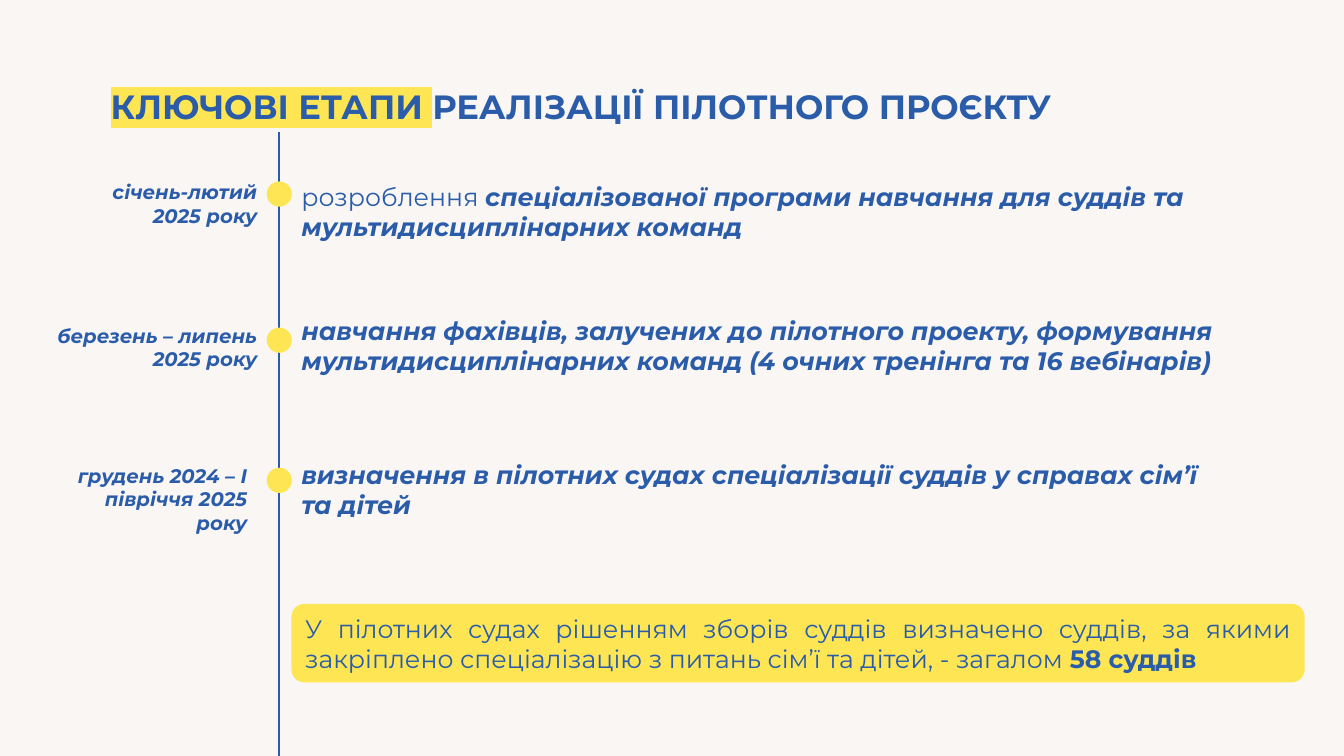
"""Build the slide with the key stages of the pilot project."""
from dataclasses import dataclass

from lxml import etree
from pptx import Presentation
from pptx import util as u
from pptx.dml.color import RGBColor
from pptx.enum import shapes, text
from pptx.oxml.ns import qn


@dataclass(frozen=True)
class Theme:
    """Colours, font and type sizes of the slide."""
    background: str = "F9F6F3"
    blue: str = "2A5CAA"
    yellow: str = "FEE554"
    font: str = "Montserrat"
    title: int = 24
    body: int = 18
    date: int = 14


THEME = Theme()
AXIS_X = 2.77
DOT_SIZE = 0.25
BODY_LEFT = 2.89

STAGES = [
    {
        "date": "січень-лютий 2025 року",
        "date_box": (0.88, 1.74, 1.77, 0.57),
        "dot_top": 1.8,
        "runs": [("розроблення ", ""),
                 ("спеціалізованої програми навчання для суддів та "
                  "мультидисциплінарних команд", "bi")],
        "body_box": (BODY_LEFT, 1.75, 9.17, 0.71),
    },
    {
        "date": "березень – липень 2025 року",
        "date_box": (0.19, 3.16, 2.46, 0.57),
        "dot_top": 3.25,
        "runs": [("навчання фахівців, залучених до пілотного проекту, формування "
                  "мультидисциплінарних команд (4 очних тренінга та 16 вебінарів)", "bi")],
        "body_box": (BODY_LEFT, 3.08, 9.62, 0.71),
    },
    {
        "date": "грудень 2024 – І півріччя 2025 року",
        "date_box": (0.58, 4.55, 1.97, 0.81),
        "dot_top": 4.64,
        "runs": [("визначення в пілотних судах спеціалізації суддів у справах сім’ї "
                  "та дітей", "bi")],
        "body_box": (BODY_LEFT, 4.51, 9.17, 0.71),
    },
]


def inches(box):
    """Turn a sequence of numbers into lengths."""
    return [u.Inches(value) for value in box]


def highlight(run, color):
    """Put a marker colour behind a run."""
    fill = run.font._element.find(qn("a:solidFill"))
    marker = etree.Element(qn("a:highlight"))
    etree.SubElement(marker, qn("a:srgbClr"), val=color)
    fill.addnext(marker)


def write_runs(frame, runs, size, align=text.PP_ALIGN.LEFT):
    """Write one paragraph of runs styled by b (bold), i (italic) and h (highlight)."""
    frame.word_wrap = True
    frame.auto_size = text.MSO_AUTO_SIZE.SHAPE_TO_FIT_TEXT
    paragraph = frame.paragraphs[0]
    paragraph.alignment = align
    for words, style in runs:
        run = paragraph.add_run()
        run.text = words
        run.font.name = THEME.font
        run.font.size = u.Pt(size)
        run.font.bold = "b" in style
        run.font.italic = "i" in style
        run.font.color.rgb = RGBColor.from_string(THEME.blue)
        if "h" in style:
            highlight(run, THEME.yellow)


def add_text(slide, box, runs, size, align=text.PP_ALIGN.LEFT):
    """Add a wrapped text box."""
    write_runs(slide.shapes.add_textbox(*inches(box)).text_frame, runs, size, align)


def add_yellow_shape(slide, kind, box):
    """Add a flat yellow shape without an outline."""
    shape = slide.shapes.add_shape(kind, *inches(box))
    shape.shadow.inherit = False
    shape.fill.solid()
    shape.fill.fore_color.rgb = RGBColor.from_string(THEME.yellow)
    shape.line.fill.background()
    return shape


def add_axis(slide):
    """Add the vertical line of the timeline."""
    axis = slide.shapes.add_connector(
        shapes.MSO_CONNECTOR.STRAIGHT, *inches((AXIS_X, 1.31, AXIS_X, 7.74)))
    axis.line.color.rgb = RGBColor.from_string(THEME.blue)
    axis.line.width = u.Pt(1.5)
    etree.SubElement(axis._element.spPr, qn("a:effectLst"))


def add_stage(slide, stage):
    """Add the date, the dot and the description of one stage."""
    add_text(slide, stage["date_box"], [(stage["date"], "bi")],
             THEME.date, text.PP_ALIGN.RIGHT)
    add_yellow_shape(slide, shapes.MSO_SHAPE.OVAL,
                     (AXIS_X - DOT_SIZE / 2, stage["dot_top"], DOT_SIZE, DOT_SIZE))
    add_text(slide, stage["body_box"], stage["runs"], THEME.body)


def add_summary(slide):
    """Add the yellow panel with the result."""
    panel = add_yellow_shape(slide, shapes.MSO_SHAPE.ROUNDED_RECTANGLE,
                             (BODY_LEFT, 5.99, 10.05, 0.78))
    panel.text_frame.vertical_anchor = text.MSO_ANCHOR.MIDDLE
    write_runs(panel.text_frame,
               [("У пілотних судах рішенням зборів суддів визначено суддів, за якими "
                 "закріплено спеціалізацію з питань сім’ї та дітей, - загалом ", ""),
                ("58 суддів", "b")],
               THEME.body, text.PP_ALIGN.JUSTIFY)


def main():
    """Build and save the presentation."""
    presentation = Presentation()
    presentation.slide_width = u.Inches(13.33)
    presentation.slide_height = u.Inches(7.5)
    slide = presentation.slides.add_slide(presentation.slide_layouts[6])
    slide.background.fill.solid()
    slide.background.fill.fore_color.rgb = RGBColor.from_string(THEME.background)
    add_text(slide, (1, 0.8, 10.17, 0.5),
             [("КЛЮЧОВІ ЕТАПИ ", "bh"), ("РЕАЛІЗАЦІЇ ПІЛОТНОГО ПРОЄКТУ", "b")],
             THEME.title)
    add_axis(slide)
    for stage in STAGES:
        add_stage(slide, stage)
    add_summary(slide)
    presentation.save("out.pptx")


if __name__ == "__main__":
    main()
